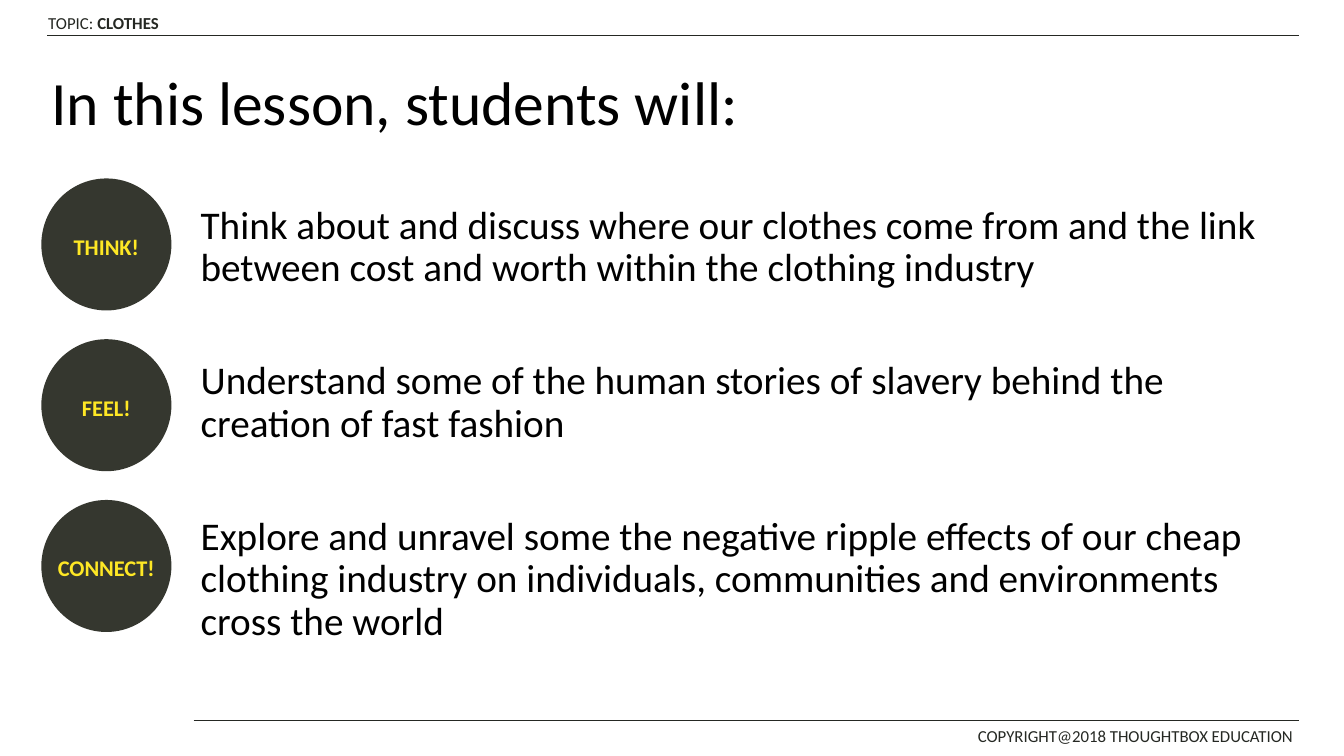
from dataclasses import dataclass

from lxml import etree
from pptx import Presentation
from pptx.dml.color import RGBColor
from pptx.enum.shapes import MSO_CONNECTOR, MSO_SHAPE
from pptx.enum.text import MSO_ANCHOR, MSO_AUTO_SIZE, PP_ALIGN
from pptx.oxml.ns import qn
from pptx.util import Inches, Pt

STRAIGHT = MSO_CONNECTOR.STRAIGHT
ELLIPSE = MSO_SHAPE.OVAL
TOP, MIDDLE = MSO_ANCHOR.TOP, MSO_ANCHOR.MIDDLE
LEFT, CENTER = PP_ALIGN.LEFT, PP_ALIGN.CENTER
NO_AUTOFIT = MSO_AUTO_SIZE.NONE


@dataclass(frozen=True)
class Theme:
    font: str = "Calibri"
    text: str = "000000"
    margin: str = "252823"
    badge: str = "35372F"
    badge_text: str = "FEE725"
    title_size: int = 44
    body_size: int = 28
    badge_size: int = 16
    margin_size: int = 12


THEME = Theme()

GOALS = [
    ("THINK!", "Think about and discuss where our clothes come from and the link "
               "between cost and worth within the clothing industry"),
    ("FEEL!", "Understand some of the human stories of slavery behind the "
              "creation of fast fashion"),
    ("CONNECT!", "Explore and unravel some the negative ripple effects of our cheap "
                 "clothing industry on individuals, communities and environments "
                 "cross the world"),
]


def write(frame, paragraphs, *, size, color, bold=False, align=LEFT, anchor=TOP,
          wrap=True, line_spacing=1.0, gap=0, after=0):
    frame.auto_size = NO_AUTOFIT
    frame.word_wrap = wrap
    frame.vertical_anchor = anchor
    for index, runs in enumerate(paragraphs):
        paragraph = frame.paragraphs[0] if index == 0 else frame.add_paragraph()
        properties = paragraph._p.get_or_add_pPr()
        properties.set("marL", "0")
        properties.set("indent", "0")
        etree.SubElement(properties, qn("a:buNone"))
        paragraph.alignment = align
        paragraph.line_spacing = line_spacing
        paragraph.space_before = Pt(gap if index else 0)
        paragraph.space_after = Pt(after)
        for text, run_bold in runs:
            run = paragraph.add_run()
            run.text = text
            run.font.name = THEME.font
            run.font.size = Pt(size)
            run.font.bold = bold or run_bold
            run.font.color.rgb = RGBColor.from_string(color)


def place(shape, box):
    shape.left, shape.top, shape.width, shape.height = map(Inches, box)


def add_rule(slide, left, right, y):
    rule = slide.shapes.add_connector(
        STRAIGHT, Inches(left), Inches(y), Inches(right), Inches(y))
    rule.line.color.rgb = RGBColor.from_string(THEME.margin)
    rule.line.width = Pt(1)
    etree.SubElement(rule._element.spPr, qn("a:effectLst"))


def add_margin_text(slide, box, runs, wrap):
    label = slide.shapes.add_textbox(*map(Inches, box))
    write(label.text_frame, [runs], size=THEME.margin_size, color=THEME.margin, wrap=wrap)


def add_header(slide, box):
    left, top, width, height = box
    add_margin_text(slide, (left - 0.09, top, 1.38, 0.3),
                    [("TOPIC: ", False), ("CLOTHES", True)], False)
    add_rule(slide, left, left + width, top + height)


def add_footer(slide, box):
    left, top, width, height = box
    right = left + width
    add_margin_text(slide, (right - 3.28, top, 3.4, height),
                    [("COPYRIGHT@2018 THOUGHTBOX EDUCATION", False)], True)
    add_rule(slide, left, right, top)


def add_title(slide, box):
    title = slide.shapes.title
    place(title, box)
    write(title.text_frame, [[("In this lesson, students will:", False)]],
          size=THEME.title_size, color=THEME.text, anchor=MIDDLE, line_spacing=0.9)


def add_goal_list(slide, box):
    goal_list = slide.placeholders[1]
    place(goal_list, box)
    write(goal_list.text_frame, [[(goal, False)] for _, goal in GOALS],
          size=THEME.body_size, color=THEME.text, line_spacing=0.9, gap=50.5)


def add_badges(slide, box):
    left, top, width, height = box
    diameter = 1.31
    pitch = (height - diameter) / (len(GOALS) - 1)
    for index, (label, _) in enumerate(GOALS):
        badge = slide.shapes.add_shape(
            ELLIPSE, *map(Inches, (left, top + index * pitch, width, diameter)))
        badge.shadow.inherit = False
        badge.fill.solid()
        badge.fill.fore_color.rgb = RGBColor.from_string(THEME.badge)
        badge.line.fill.background()
        write(badge.text_frame, [[(label, True)]], size=THEME.badge_size,
              color=THEME.badge_text, align=CENTER, anchor=MIDDLE, wrap=False,
              line_spacing=1.15, after=10)


def add_goals_slide(presentation):
    slide = presentation.slides.add_slide(presentation.slide_layouts[1])
    add_header(slide, (0.47, 0.08, 12.41, 0.27))
    add_footer(slide, (1.92, 7.15, 10.96, 0.31))
    add_title(slide, (0.41, 0.4, 12.42, 1.3))
    add_goal_list(slide, (1.89, 1.99, 11.04, 5.02))
    add_badges(slide, (0.41, 1.77, 1.29, 4.5))


def main():
    presentation = Presentation()
    presentation.slide_width = Inches(13.33)
    presentation.slide_height = Inches(7.5)
    add_goals_slide(presentation)
    presentation.save("out.pptx")


if __name__ == "__main__":
    main()
